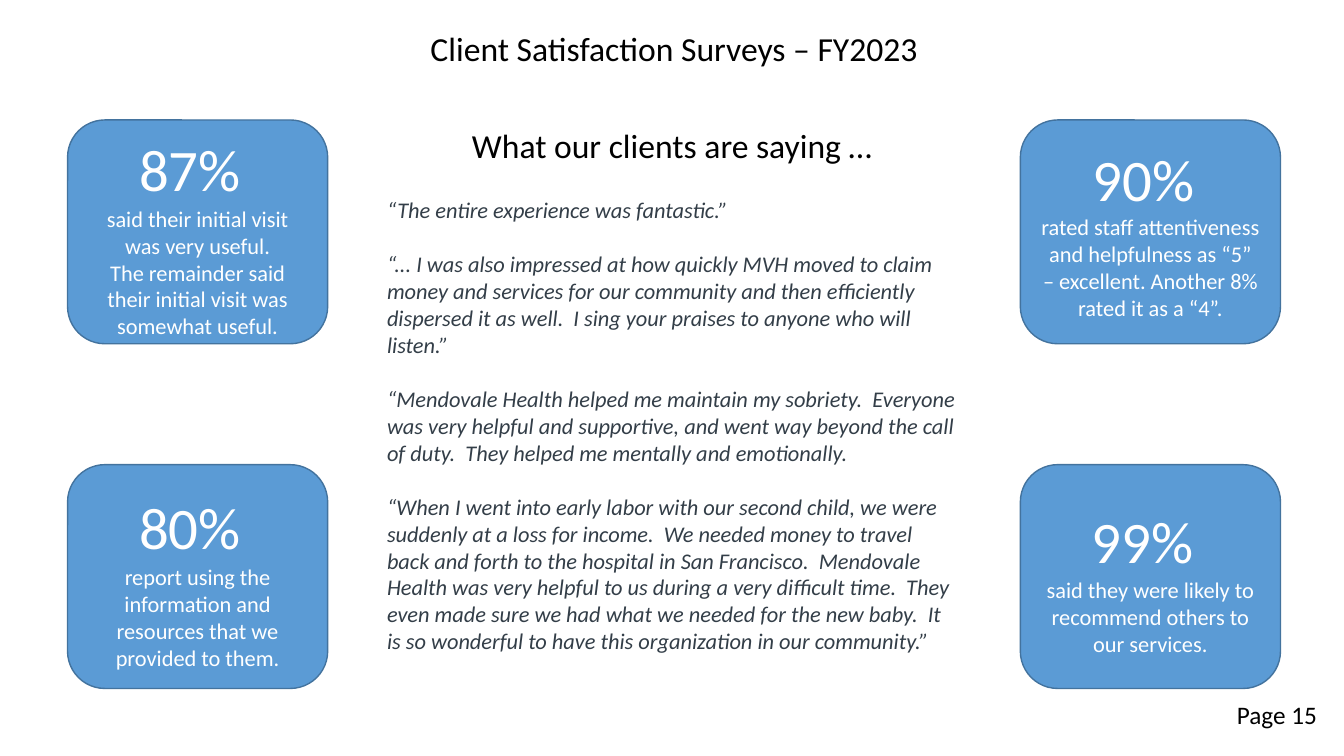
from pptx import Presentation
from pptx.dml.color import RGBColor
from pptx.enum.shapes import MSO_SHAPE
from pptx.enum.text import MSO_ANCHOR, PP_ALIGN
from pptx.util import Emu, Pt

ROUNDED = MSO_SHAPE.ROUNDED_RECTANGLE
MIDDLE = MSO_ANCHOR.MIDDLE
CENTER = PP_ALIGN.CENTER
LEFT = PP_ALIGN.LEFT
EMU_PER_PX = 9144


def px(n):
    return Emu(n * EMU_PER_PX)


def rgb(value):
    return RGBColor.from_string(value)


class Deck:
    font = "Calibri"
    black = "000000"
    white = "FFFFFF"
    quote = "333E48"
    blue = "5B9BD5"
    outline = "43739E"

    def __init__(self, width, height):
        self.prs = Presentation()
        self.prs.slide_width = px(width)
        self.prs.slide_height = px(height)
        self.s = self.prs.slides.add_slide(self.prs.slide_layouts[6])

    def paragraph(self, tf, runs, color, align=LEFT, before=0, italic=False):
        p = tf.paragraphs[0]
        if p.runs:
            p = tf.add_paragraph()
        p.alignment = align
        p.space_before = Pt(before)
        for text, size in runs:
            r = p.add_run()
            r.text = text
            r.font.name = self.font
            r.font.size = Pt(size)
            r.font.italic = italic
            r.font.color.rgb = rgb(color)

    def text_box(self, x, y, w, h):
        tf = self.s.shapes.add_textbox(px(x), px(y), px(w), px(h)).text_frame
        tf.word_wrap = True
        return tf

    def label(self, x, y, w, h, text, size, align=LEFT):
        tf = self.text_box(x, y, w, h)
        self.paragraph(tf, [(text, size)], self.black, align)

    def quotes(self, x, y, w, h, heading, quotes):
        tf = self.text_box(x, y, w, h)
        self.paragraph(tf, [(heading, 24)], self.black, CENTER)
        for i, text in enumerate(quotes):
            before = 19.5 if i else 22
            self.paragraph(tf, [(text, 16)], self.quote, LEFT, before, True)

    def stat_card(self, x, y, w, h, figure, lines):
        sp = self.s.shapes.add_shape(ROUNDED, px(x), px(y), px(w), px(h))
        sp.shadow.inherit = False
        sp.fill.solid()
        sp.fill.fore_color.rgb = rgb(self.blue)
        sp.line.color.rgb = rgb(self.outline)
        sp.line.width = Pt(1)
        tf = sp.text_frame
        tf.word_wrap = True
        tf.vertical_anchor = MIDDLE
        self.paragraph(tf, figure, self.white, CENTER)
        for text in lines:
            self.paragraph(tf, [(text, 16)], self.white, CENTER)

    def save(self):
        self.prs.save("out.pptx")


QUOTES = [
    "“The entire experience was fantastic.”",
    "“... I was also impressed at how quickly MVH moved to claim money and "
    "services for our community and then efficiently dispersed it as well.  "
    "I sing your praises to anyone who will listen.”",
    "“Mendovale Health helped me maintain my sobriety.  Everyone was very "
    "helpful and supportive, and went way beyond the call of duty.  They "
    "helped me mentally and emotionally.",
    "“When I went into early labor with our second child, we were suddenly "
    "at a loss for income.  We needed money to travel back and forth to the "
    "hospital in San Francisco.  Mendovale Health was very helpful to us "
    "during a very difficult time.  They even made sure we had what we needed "
    "for the new baby.  It is so wonderful to have this organization in our "
    "community.”",
]

COLUMNS = (67, 1012)
ROWS = (119, 461)
CARDS = [
    (0, 0, [("87%", 42), (" ", 48)],
     ["said their initial visit was very useful.",
      "The remainder said their initial visit was somewhat useful."]),
    (0, 1, [("80%", 42), (" ", 48)],
     ["report using the information and resources that we provided to them."]),
    (1, 1, [("99%", 42), (" ", 48)],
     ["said they were likely to recommend others to our services."]),
    (1, 0, [("90% ", 42)],
     ["rated staff attentiveness and helpfulness as “5” – excellent. "
      "Another 8% rated it as a “4”."]),
]


def main():
    deck = Deck(1333, 750)
    deck.label(49, 23, 1239, 50, "Client Satisfaction Surveys – FY2023", 24, CENTER)
    deck.quotes(374, 119, 585, 565, "What our clients are saying …", QUOTES)
    for col, row, figure, lines in CARDS:
        deck.stat_card(COLUMNS[col], ROWS[row], 258, 222, figure, lines)
    deck.label(1217, 689, 117, 40, "Page 15", 18)
    deck.save()


if __name__ == "__main__":
    main()
